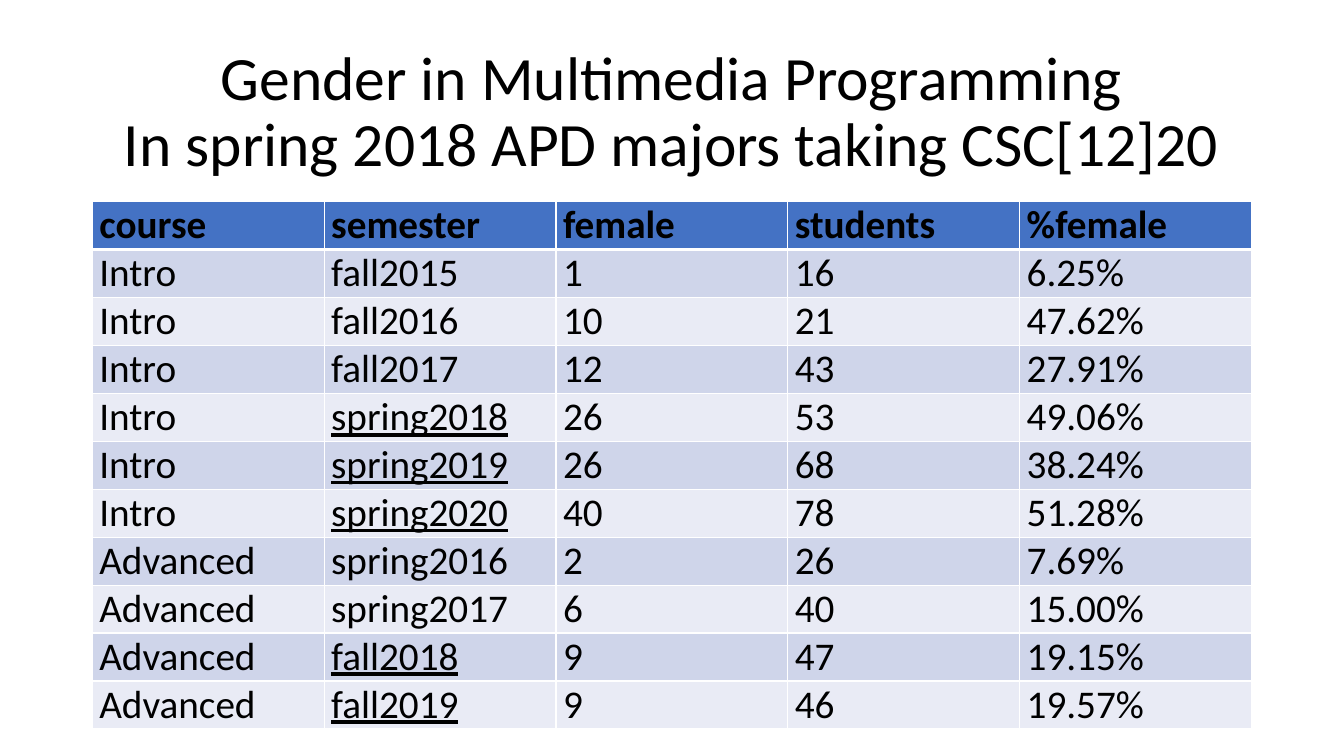
"""Build the slide on gender in the multimedia programming courses."""
from dataclasses import dataclass

from lxml.etree import SubElement
from pptx import Presentation
from pptx.dml.color import RGBColor
from pptx.enum.text import MSO_ANCHOR, MSO_AUTO_SIZE, PP_ALIGN
from pptx.oxml.ns import qn
from pptx.slide import Slide
from pptx.table import _Cell
from pptx.text.text import _Paragraph
from pptx.util import Length, Pt


@dataclass(frozen=True)
class Theme:
    font: str = "Calibri"
    text: str = "000000"
    header: str = "4472C4"
    bands: tuple[str, str] = ("CFD5EA", "E9EBF5")
    border: str = "FFFFFF"
    title_size: Length = Pt(44)
    cell_size: Length = Pt(28)
    thin: Length = Pt(1)
    thick: Length = Pt(3)


@dataclass(frozen=True)
class Enrolment:
    course: str
    semester: str
    female: int
    students: int
    underlined: bool = False

    def labels(self) -> tuple[str, ...]:
        share = f"{self.female / self.students:.2%}"
        return self.course, self.semester, str(self.female), str(self.students), share


THEME = Theme()
LEFT, WIDTH = Pt(66), Pt(828)
TITLE_TOP, TITLE_HEIGHT = Pt(28.75), Pt(104.4)
TABLE_TOP, ROW_HEIGHT = Pt(144), Pt(29.5)
CELL_INSET, TAB_STOP = Pt(5), Pt(18)

TITLE_LINES = ("Gender in Multimedia Programming", "In spring 2018 APD majors taking CSC[12]20")
HEADINGS = ("course", "semester", "female", "students", "%female")
SEMESTER_COLUMN = HEADINGS.index("semester")
ENROLMENTS = (
    Enrolment("Intro", "fall2015", 1, 16),
    Enrolment("Intro", "fall2016", 10, 21),
    Enrolment("Intro", "fall2017", 12, 43),
    Enrolment("Intro", "spring2018", 26, 53, True),
    Enrolment("Intro", "spring2019", 26, 68, True),
    Enrolment("Intro", "spring2020", 40, 78, True),
    Enrolment("Advanced", "spring2016", 2, 26),
    Enrolment("Advanced", "spring2017", 6, 40),
    Enrolment("Advanced", "fall2018", 9, 47, True),
    Enrolment("Advanced", "fall2019", 9, 46, True),
)


def add_span(para: _Paragraph, text: str, size: Length, bold: bool = False, underline: bool = False) -> None:
    span = para.add_run()
    span.text = text
    span.font.name = THEME.font
    span.font.size = size
    span.font.bold = bold
    span.font.underline = underline
    span.font.color.rgb = RGBColor.from_string(THEME.text)


def add_title(page: Slide) -> None:
    title = page.shapes.title
    title.left, title.top, title.width, title.height = LEFT, TITLE_TOP, WIDTH, TITLE_HEIGHT
    frame = title.text_frame
    frame.word_wrap = True
    frame.auto_size = MSO_AUTO_SIZE.NONE
    frame.vertical_anchor = MSO_ANCHOR.MIDDLE
    para = frame.paragraphs[0]
    para.alignment = PP_ALIGN.CENTER
    para.line_spacing = 0.9
    for index, line in enumerate(TITLE_LINES):
        if index:
            para.add_line_break()
        add_span(para, line, THEME.title_size)


def add_borders(cell: _Cell, top: Length, bottom: Length) -> None:
    properties = cell._tc.get_or_add_tcPr()
    sides = {"a:lnL": THEME.thin, "a:lnR": THEME.thin, "a:lnT": top, "a:lnB": bottom}
    for side, width in sides.items():
        line = SubElement(properties, qn(side), w=str(int(width)))
        fill = SubElement(line, qn("a:solidFill"))
        SubElement(fill, qn("a:srgbClr"), val=THEME.border)


def fill_cell(cell: _Cell, text: str, row: int, underline: bool) -> None:
    add_borders(
        cell,
        top=THEME.thick if row == 1 else THEME.thin,
        bottom=THEME.thick if row == 0 else THEME.thin,
    )
    colour = THEME.bands[(row - 1) % 2] if row else THEME.header
    cell.fill.solid()
    cell.fill.fore_color.rgb = RGBColor.from_string(colour)
    cell.margin_left = cell.margin_right = CELL_INSET
    cell.margin_top = cell.margin_bottom = Pt(0)
    cell.vertical_anchor = MSO_ANCHOR.BOTTOM
    para = cell.text_frame.paragraphs[0]
    tabs = SubElement(para._p.get_or_add_pPr(), qn("a:tabLst"))
    SubElement(tabs, qn("a:tab"), pos=str(int(TAB_STOP)), algn="l")
    para.alignment = PP_ALIGN.JUSTIFY
    add_span(para, text, THEME.cell_size, bold=row == 0, underline=underline)


def add_enrolment_table(page: Slide) -> None:
    rows = [HEADINGS, *(enrolment.labels() for enrolment in ENROLMENTS)]
    underlined = {row for row, enrolment in enumerate(ENROLMENTS, 1) if enrolment.underlined}
    table = page.shapes.add_table(
        len(rows), len(HEADINGS), LEFT, TABLE_TOP, WIDTH, ROW_HEIGHT * len(rows)
    ).table
    table.horz_banding = False
    for row, labels in enumerate(rows):
        table.rows[row].height = ROW_HEIGHT
        for column, label in enumerate(labels):
            underline = column == SEMESTER_COLUMN and row in underlined
            fill_cell(table.cell(row, column), label, row, underline)


def main() -> None:
    deck = Presentation()
    deck.slide_width, deck.slide_height = Pt(960), Pt(540)
    page = deck.slides.add_slide(deck.slide_layouts.get_by_name("Title Only"))
    add_title(page)
    add_enrolment_table(page)
    deck.save("out.pptx")


if __name__ == "__main__":
    main()
